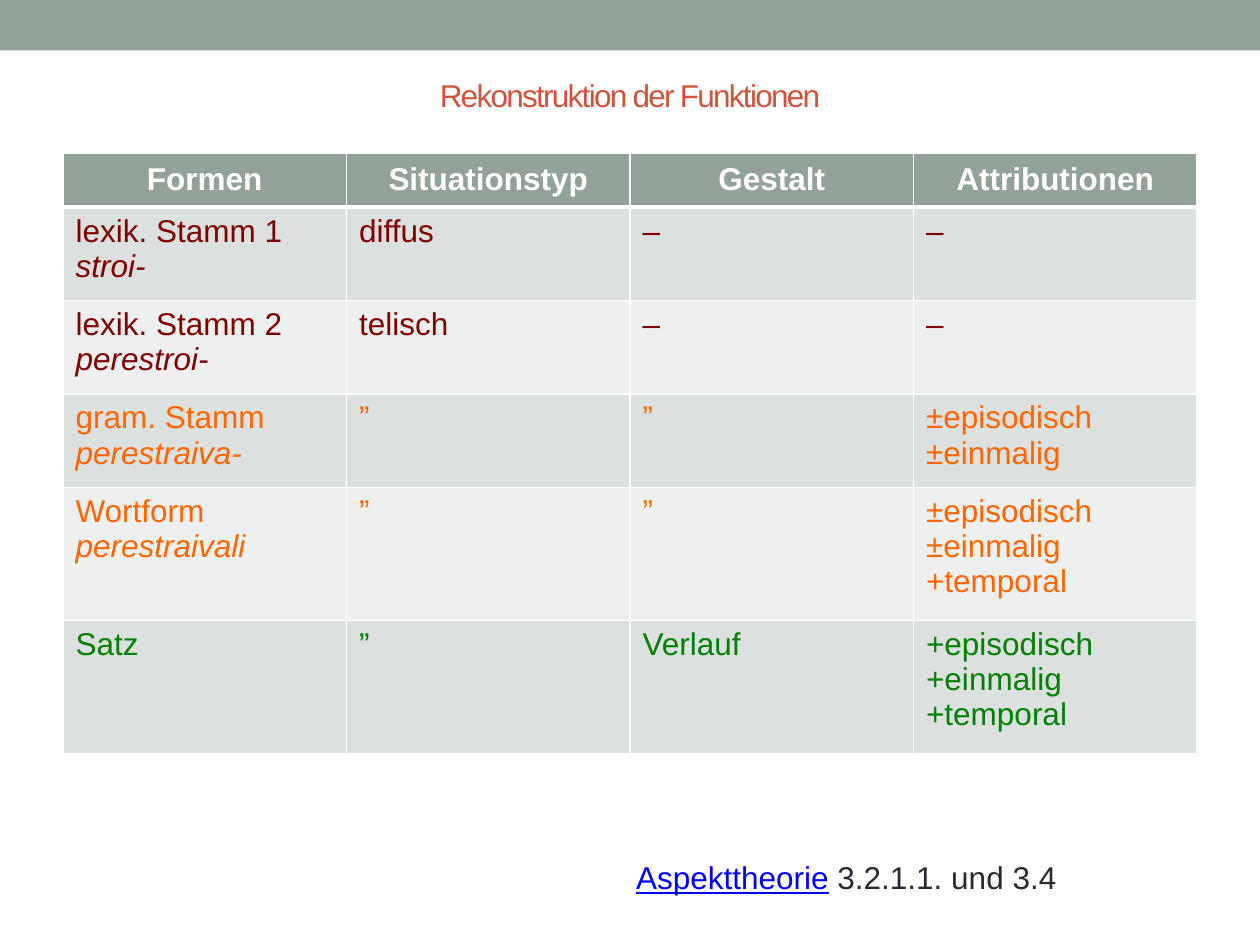
from lxml import etree
from pptx import Presentation
from pptx.dml.color import RGBColor
from pptx.enum.shapes import MSO_SHAPE
from pptx.enum.text import MSO_ANCHOR, MSO_AUTO_SIZE, PP_ALIGN
from pptx.oxml.ns import qn
from pptx.util import Pt

RECT = MSO_SHAPE.RECTANGLE
CENTER, LEFT = PP_ALIGN.CENTER, PP_ALIGN.LEFT
TOP, MIDDLE = MSO_ANCHOR.TOP, MSO_ANCHOR.MIDDLE
FIXED, GROW = MSO_AUTO_SIZE.NONE, MSO_AUTO_SIZE.SHAPE_TO_FIT_TEXT
SAGE, WHITE, BANDS = "93A299", "FFFFFF", ("DCE0DE", "EEF0EF")
MAROON, ORANGE, GREEN = "800000", "FF6600", "008000"


def color(value):
    return RGBColor.from_string(value)


class SlideBuilder:
    font, size = "Arial", 18

    def __init__(self, slide):
        self.slide = slide

    def add_paragraphs(self, tf, paragraphs, align=LEFT):
        """Each paragraph is a list of (text, format dict) runs."""
        for i, runs in enumerate(paragraphs):
            p = tf.paragraphs[0] if i == 0 else tf.add_paragraph()
            p.alignment = align
            for text, fmt in runs:
                r = p.add_run()
                r.text = text
                values = {"name": self.font, "size": Pt(self.size), **fmt}
                r.font.color.rgb = color(values.pop("color"))
                spacing = values.pop("spacing", None)
                if spacing is not None:
                    r.font._element.set("spc", str(spacing * 100))
                for name, value in values.items():
                    setattr(r.font, name, value)

    def bar(self, x, y, w, h, fill):
        sp = self.slide.shapes.add_shape(RECT, Pt(x), Pt(y), Pt(w), Pt(h))
        sp.shadow.inherit = False
        sp.fill.solid()
        sp.fill.fore_color.rgb = color(fill)
        sp.line.fill.background()

    def text(self, x, y, w, h, runs, align=LEFT, anchor=TOP, wrap=True):
        sp = self.slide.shapes.add_textbox(Pt(x), Pt(y), Pt(w), Pt(h))
        tf = sp.text_frame
        tf.word_wrap = wrap
        tf.auto_size = FIXED if wrap else GROW
        tf.vertical_anchor = anchor
        self.add_paragraphs(tf, [runs], align)

    def borders(self, cell, widths):
        tc_pr = cell._tc.get_or_add_tcPr()
        for side, width in zip("LRTB", widths):
            ln = etree.SubElement(tc_pr, qn(f"a:ln{side}"), w=str(Pt(width)))
            fill = etree.SubElement(ln, qn("a:solidFill"))
            etree.SubElement(fill, qn("a:srgbClr"), val=WHITE)

    def table(self, x, y, col_width, heights, header, rows):
        frame = self.slide.shapes.add_table(
            len(heights), len(header), Pt(x), Pt(y),
            Pt(col_width * len(header)), Pt(sum(heights)))
        table = frame.table
        for col in table.columns:
            col.width = Pt(col_width)
        for row, height in zip(table.rows, heights):
            row.height = Pt(height)
        head = [[[(name, {"color": WHITE, "bold": True})]] for name in header]
        for i, contents in enumerate([head] + rows):
            for j, paragraphs in enumerate(contents):
                cell = table.cell(i, j)
                self.borders(cell, (1, 1, 3 if i == 1 else 1, 3 if i == 0 else 1))
                cell.fill.solid()
                cell.fill.fore_color.rgb = color(BANDS[(i - 1) % 2] if i else SAGE)
                cell.vertical_anchor = TOP if i else MIDDLE
                self.add_paragraphs(cell.text_frame, paragraphs, LEFT if i else CENTER)


def form_row(ink, label, example, situation, shape, attributes):
    plain = {"color": ink, "bold": False}
    form = [(label, plain)]
    if example:
        form.append((example, {**plain, "italic": True}))
    return [[form], [[(situation, plain)]], [[(shape, plain)]],
            [[(a, plain)] for a in attributes]]


HEADER = ["Formen", "Situationstyp", "Gestalt", "Attributionen"]
ROWS = [
    form_row(MAROON, "lexik. Stamm 1 ", "stroi-", "diffus", "–", ["–"]),
    form_row(MAROON, "lexik. Stamm 2 ", "perestroi-", "telisch", "–", ["–"]),
    form_row(ORANGE, "gram. Stamm ", "perestraiva-", "”", "”",
             ["±episodisch", "±einmalig"]),
    form_row(ORANGE, "Wortform ", "perestraivali", "”", "”",
             ["±episodisch", "±einmalig", "+temporal"]),
    form_row(GREEN, "Satz", "", "”", "Verlauf",
             ["+episodisch", "+einmalig", "+temporal"]),
]


def main():
    prs = Presentation()
    prs.slide_width, prs.slide_height = Pt(720), Pt(540)
    s = SlideBuilder(prs.slides.add_slide(prs.slide_layouts[6]))

    # Top band and title
    s.bar(0, 0, 720, 28.8, SAGE)
    s.text(36, 28.4, 648, 52,
           [("Rekonstruktion der Funktionen", {"color": "D2533C", "spacing": -1})],
           CENTER, MIDDLE)

    # Table of forms and functions
    s.table(36, 87.4, 162, [31] + [53.4] * 3 + [76] * 2, HEADER, ROWS)

    # Reference
    s.text(356.4, 486.7, 257.8, 29,
           [("Aspekttheorie", {"color": "0000FF", "underline": True}),
            (" 3.2.1.1. und 3.4", {"color": "292934"})], wrap=False)

    prs.save("out.pptx")


if __name__ == "__main__":
    main()
